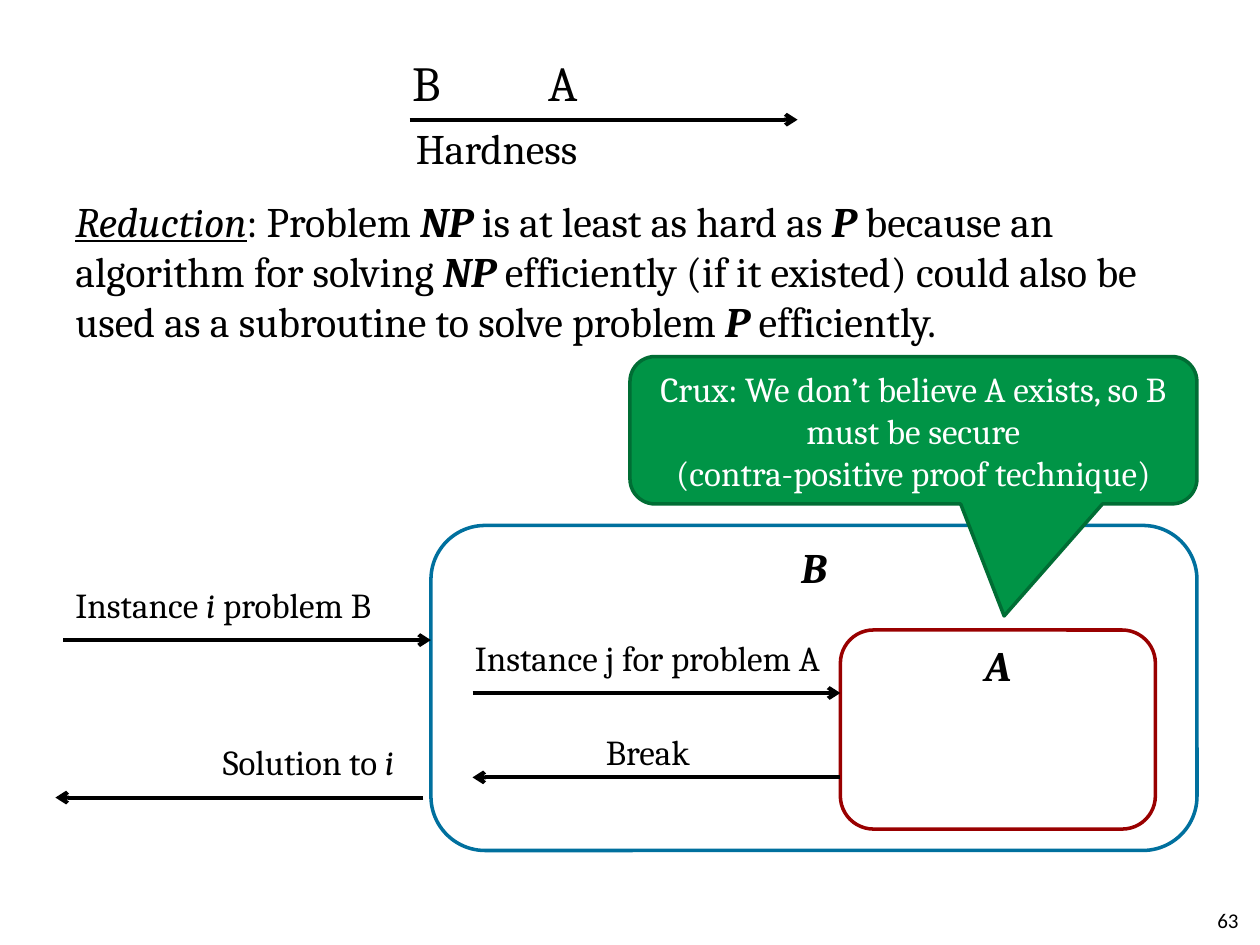
from dataclasses import dataclass

from lxml import etree
from pptx import Presentation
from pptx.dml.color import RGBColor
from pptx.enum import shapes, text
from pptx.oxml import ns
from pptx.util import Inches, Pt


@dataclass(frozen=True)
class Theme:
    ink: str = "000000"
    white: str = "FFFFFF"
    outer: str = "00709E"
    inner: str = "990000"
    callout: str = "009446"
    callout_line: str = "006D34"
    font: str = "Cambria"
    number_font: str = "Calibri"
    scale: int = 28
    body: int = 24
    label: int = 20
    number: int = 12
    outline: float = 2
    arrow: float = 2.25


T = Theme()
ALIGN = text.PP_ALIGN
ANCHOR = text.MSO_ANCHOR
SHAPE = shapes.MSO_SHAPE


def rgb(value):
    return RGBColor.from_string(value)


def write(sp, parts, size, color=T.ink, font=T.font, align=ALIGN.LEFT,
          anchor=ANCHOR.TOP, inset=(0, 0)):
    """Fill a shape with (text, style) parts; style letters are b, i and u."""
    tf = sp.text_frame
    tf.word_wrap = True
    tf.vertical_anchor = anchor
    tf.margin_left = tf.margin_right = Inches(inset[0])
    tf.margin_top = tf.margin_bottom = Inches(inset[1])
    p = tf.paragraphs[0]
    p.alignment = align
    for i, (words, style) in enumerate(parts):
        if words == "\v":
            p.add_line_break()
            continue
        r = p.add_run()
        r.text = words
        r.font.name, r.font.size = font, Pt(size)
        r.font.color.rgb = rgb(color)
        r.font.bold, r.font.italic = "b" in style, "i" in style
        r.font.underline = "u" in style
    return p


def add_text(s, x, y, w, h, parts, size, **options):
    sp = s.shapes.add_textbox(Inches(x), Inches(y), Inches(w), Inches(h))
    return write(sp, parts, size, **options)


def add_label(s, x, y, w, parts):
    add_text(s, x, y, w, 0.45, parts, T.label, inset=(0.1, 0.05))


def add_block(s, kind, x, y, w, h, line, fill=None):
    sp = s.shapes.add_shape(kind, Inches(x), Inches(y), Inches(w), Inches(h))
    sp.shadow.inherit = False
    if fill:
        sp.fill.solid()
        sp.fill.fore_color.rgb = rgb(fill)
    else:
        sp.fill.background()
    sp.line.color.rgb = rgb(line)
    sp.line.width = Pt(T.outline)
    return sp


def add_arrow(s, x1, x2, y):
    """Horizontal arrow pointing at x2."""
    arrow = s.shapes.add_connector(shapes.MSO_CONNECTOR.STRAIGHT,
                                   Inches(x1), Inches(y), Inches(x2), Inches(y))
    arrow.line.color.rgb = rgb(T.ink)
    arrow.line.width = Pt(T.arrow)
    props = arrow._element.spPr
    etree.SubElement(props.find(ns.qn("a:ln")), ns.qn("a:tailEnd"), type="arrow")
    etree.SubElement(props, ns.qn("a:effectLst"))


def hardness_scale(s, x, y, w):
    """Axis at height y with the two problems above it and its name below."""
    add_arrow(s, x, x + w, y)
    add_text(s, x + 0.05, y + 0.02, 1.44, 0.53, [("Hardness", "")], T.body)
    for offset, name in ((0.02, "B"), (1.1, "A")):
        add_text(s, x + offset, y - 0.53, 0.35, 0.62, [(name, "")], T.scale)


def definition(s, x, y, w, h):
    parts = [("Reduction", "iu"), (": Problem ", ""), ("NP", "bi"),
             (" is at least as hard as ", ""), ("P", "bi"),
             (" because an algorithm for solving ", ""), ("NP", "bi"),
             (" efficiently (if it existed) could also be used as a subroutine "
              "to solve problem ", ""), ("P", "bi"), (" efficiently.", "")]
    p = add_text(s, x, y, w, h, parts, T.body, inset=(0.1, 0.05))
    p.space_before = Pt(0.2 * T.body)


def reduction_diagram(s, x, y, w, h):
    """Solver B at the right of the box, with solver A nested inside it."""
    outer_x, outer_w = x + 2.92, w - 2.92
    inner_x, inner_y = outer_x + 3.25, y + 0.83
    solvers = (
        ("A", inner_x, inner_y, 2.5, 1.58, T.inner, T.white),
        ("B", outer_x, y, outer_w, h, T.outer, None),
    )
    for name, left, top, width, height, line, fill in solvers:
        sp = add_block(s, SHAPE.ROUNDED_RECTANGLE, left, top, width, height, line, fill)
        write(sp, [(name, "bi")], T.body, align=ALIGN.CENTER)

    # Input and output of B
    add_arrow(s, x, outer_x, y + 0.91)
    add_label(s, x, y + 0.41, 2.8, [("Instance ", ""), ("i", "i"), (" problem B", "")])
    add_arrow(s, outer_x - 0.06, x - 0.06, y + 2.16)
    add_label(s, x + 1.17, y + 1.66, 1.7, [("Solution to ", ""), ("i", "i")])

    # Input and output of A
    add_arrow(s, outer_x + 0.33, inner_x, inner_y + 0.5)
    add_label(s, outer_x + 0.25, inner_y, 3.1, [("Instance j for problem A", "")])
    add_arrow(s, inner_x, outer_x + 0.33, inner_y + 1.17)
    add_label(s, outer_x + 1.29, inner_y + 0.75, 1, [("Break", "")])


def crux_callout(s, x, y, w, h):
    sp = add_block(s, SHAPE.ROUNDED_RECTANGULAR_CALLOUT, x, y, w, h,
                   T.callout_line, T.callout)
    for i, value in enumerate((0.16, 1.26, 0.17)):
        sp.adjustments[i] = value
    parts = [("Crux: We don’t believe A exists, so B must be secure", ""),
             ("\v", ""), ("(contra-positive proof technique)", "")]
    write(sp, parts, T.label, color=T.white, align=ALIGN.CENTER, anchor=ANCHOR.MIDDLE)


def page_number(s, x, y, w, h):
    add_text(s, x, y, w, h, [("63", "")], T.number, font=T.number_font,
             align=ALIGN.RIGHT, anchor=ANCHOR.MIDDLE)


def main():
    prs = Presentation()
    prs.slide_width, prs.slide_height = Inches(10), Inches(7.5)
    s = prs.slides.add_slide(prs.slide_layouts[6])
    definition(s, 0.5, 1.5, 9, 5.2)
    page_number(s, 7.5, 7.1, 2.33, 0.4)
    reduction_diagram(s, 0.5, 4.17, 9, 2.58)
    crux_callout(s, 5, 2.83, 4.5, 1.17)
    hardness_scale(s, 3.25, 0.95, 3.08)
    prs.save("out.pptx")


if __name__ == "__main__":
    main()
